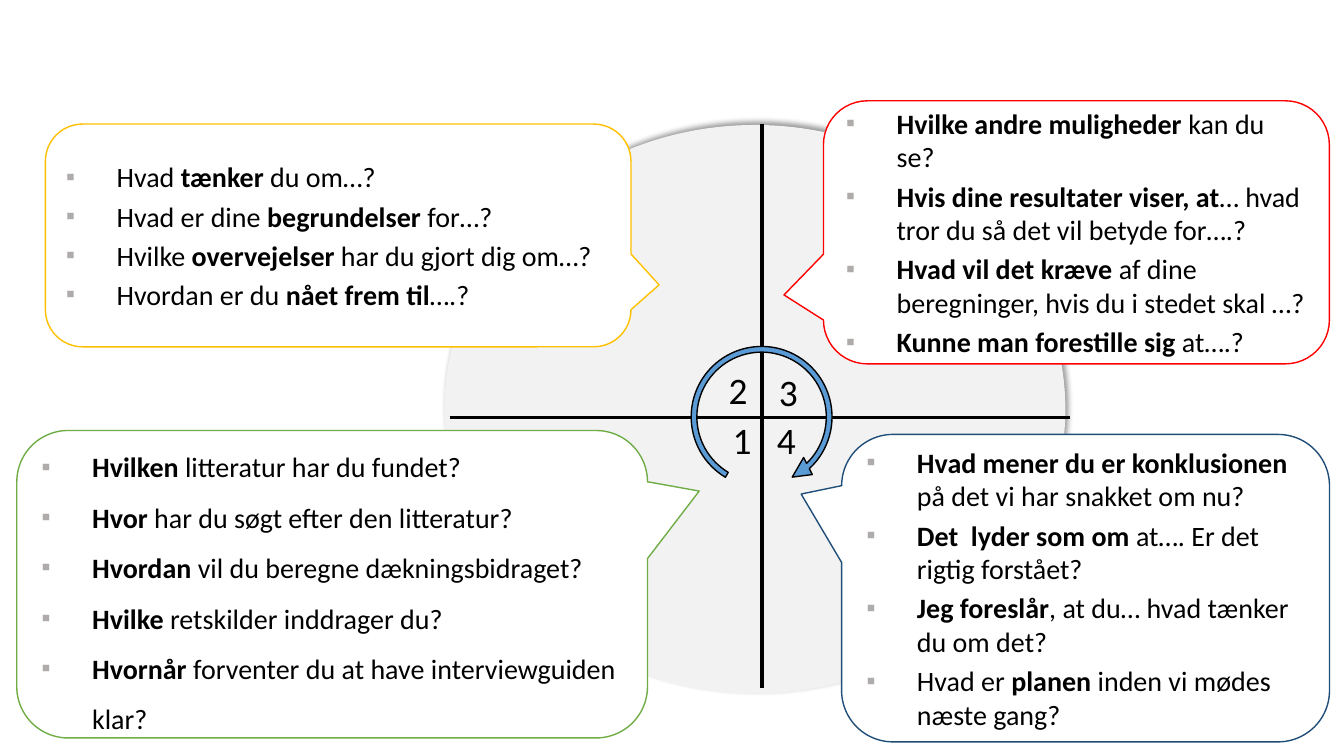
import pptx
import pptx.util
import pptx.dml.color
import pptx.enum.shapes
import pptx.enum.text
import pptx.oxml
from pptx.oxml.ns import nsdecls, qn

Pt = pptx.util.Pt
SHAPE = pptx.enum.shapes.MSO_SHAPE
ANCHOR = pptx.enum.text.MSO_ANCHOR
ALIGN = pptx.enum.text.PP_ALIGN

# Box (left, top, width, height), outline, callout tip, line spacing,
# space before, questions with *bold* parts
CALLOUTS = [
    ((12, 307.5, 450.5, 219.6), "70AD47", (0.582, -0.303), 1.5, 0, [
        "*Hvilken* litteratur har du fundet?",
        "*Hvor *har du søgt efter den litteratur?",
        "*Hvordan *vil du beregne dækningsbidraget?",
        "*Hvilke *retskilder inddrager du?",
        "*Hvornår* forventer du at have interviewguiden klar?"]),
    ((32.4, 88.6, 418.3, 159.1), "FFC000", (0.548, 0.222), 1, 4, [
        "Hvad *tænker* du om…?",
        "Hvad er dine *begrundelser* for…?",
        "Hvilke *overvejelser* har du gjort dig om…?",
        "Hvordan er du *nået frem til*….?"]),
    ((588.2, 72, 361.4, 187.9), "FF0000", (-0.578, 0.238), 1, 4, [
        "*Hvilke andre muligheder *kan du se?",
        "*Hvis dine resultater viser, at*… hvad tror du så det vil betyde for….?",
        "*Hvad vil det kræve *af dine beregninger, hvis du i stedet skal …?",
        "*Kunne man forestille sig* at….?"]),
    ((601.2, 310.3, 348.5, 219.6), "1F4E79", (-0.583, -0.306), 1, 4, [
        "*Hvad mener du er konklusionen *på det vi har snakket om nu?",
        "*Det  lyder som om *at…. Er det rigtig forstået?",
        "*Jeg foreslår*, at du… hvad tænker du om det?",
        "Hvad er *planen* inden vi mødes næste gang?"]),
]


def color(hex_str):
    return pptx.dml.color.RGBColor.from_string(hex_str)


def add_text(p, text, size=20, hex_color="000000", font="Calibri"):
    """Add runs to a paragraph; parts between asterisks are bold."""
    for i, part in enumerate(text.split("*")):
        if part:
            r = p.add_run()
            r.text = part
            r.font.size, r.font.name = Pt(size), font
            r.font.bold = i % 2 == 1
            r.font.color.rgb = color(hex_color)


def add_bullet(p, indent=36):
    pPr = p._p.get_or_add_pPr()
    pPr.set("marL", str(Pt(indent)))
    pPr.set("indent", str(-Pt(indent)))
    for xml in ('<a:buClr %s><a:srgbClr val="AFABAB"/></a:buClr>',
                '<a:buSzPct %s val="90000"/>',
                '<a:buFont %s typeface="Calibri"/>',
                '<a:buChar %s char="▪"/>'):
        pPr.append(pptx.oxml.parse_xml(xml % nsdecls("a")))


def add_shape(s, kind, box, fill, line=None, adj=()):
    sp = s.shapes.add_shape(kind, *map(Pt, box))
    sp.shadow.inherit = False
    sp.fill.solid()
    sp.fill.fore_color.rgb = color(fill)
    if line:
        sp.line.color.rgb = color(line)
        sp.line.width = Pt(1)
    else:
        sp.line.fill.background()
    for i, value in enumerate(adj):
        sp.adjustments[i] = value
    return sp


def add_axis(s, x1, y1, x2, y2):
    line = s.shapes.add_connector(
        pptx.enum.shapes.MSO_CONNECTOR.STRAIGHT, Pt(x1), Pt(y1), Pt(x2), Pt(y2))
    line.line.color.rgb = color("000000")
    line.line.width = Pt(2.25)
    line._element.spPr.append(pptx.oxml.parse_xml("<a:effectLst %s/>" % nsdecls("a")))


def add_wheel(s, left, top, width, height):
    """Shaded disc with a cross, numbered quadrants and a clockwise arrow."""
    disc = add_shape(s, SHAPE.OVAL, (left, top, width, height), "F2F2F2")
    disc._element.spPr.find(qn("a:effectLst")).append(pptx.oxml.parse_xml(
        '<a:outerShdw %s blurRad="%d" dist="%d" dir="18900000" algn="bl" rotWithShape="0">'
        '<a:srgbClr val="000000"><a:alpha val="40000"/></a:srgbClr></a:outerShdw>'
        % (nsdecls("a"), Pt(4), Pt(3))))
    cx, cy = left + 226.8, top + 208.8
    add_axis(s, cx, top - 0.7, cx, top + 401.8)
    add_axis(s, left + 3.6, cy, left + 447.1, cy)
    for number, dx, dy in (("1", -28.1, -3.6), ("2", -31, -39.6),
                           ("4", 3.6, -3.6), ("3", 5, -38.2)):
        tb = s.shapes.add_textbox(Pt(cx + dx), Pt(cy + dy), Pt(28.1), Pt(39.6))
        tb.text_frame.word_wrap = False
        tb.text_frame.auto_size = pptx.enum.text.MSO_AUTO_SIZE.SHAPE_TO_FIT_TEXT
        add_text(tb.text_frame.paragraphs[0], number, size=26.7)
    arrow = add_shape(s, SHAPE.CIRCULAR_ARROW, (cx - 55.4, cy - 55.4, 110.2, 110.2),
                      "5B9BD5", "000000", (0.037, 9.854, 5.061, 49.664, 0.062))
    arrow.rotation = 38.2


def add_callout(s, box, outline, tip, spacing, before, questions):
    sp = add_shape(s, SHAPE.ROUNDED_RECTANGULAR_CALLOUT, box, "FFFFFF", outline,
                   (*tip, 0.167))
    tf = sp.text_frame
    tf.word_wrap = True
    tf.vertical_anchor = ANCHOR.MIDDLE
    for i, question in enumerate(questions):
        p = tf.add_paragraph() if i else tf.paragraphs[0]
        p.alignment = ALIGN.LEFT
        p.line_spacing = spacing
        p.space_before = Pt(before)
        add_bullet(p)
        add_text(p, question)


def main():
    prs = pptx.Presentation()
    prs.slide_width, prs.slide_height = Pt(960), Pt(540)
    s = prs.slides.add_slide(prs.slide_layouts[6])
    add_wheel(s, 317.5, 89.3, 443.5, 406.1)
    for callout in CALLOUTS:
        add_callout(s, *callout)
    prs.save("out.pptx")


if __name__ == "__main__":
    main()
